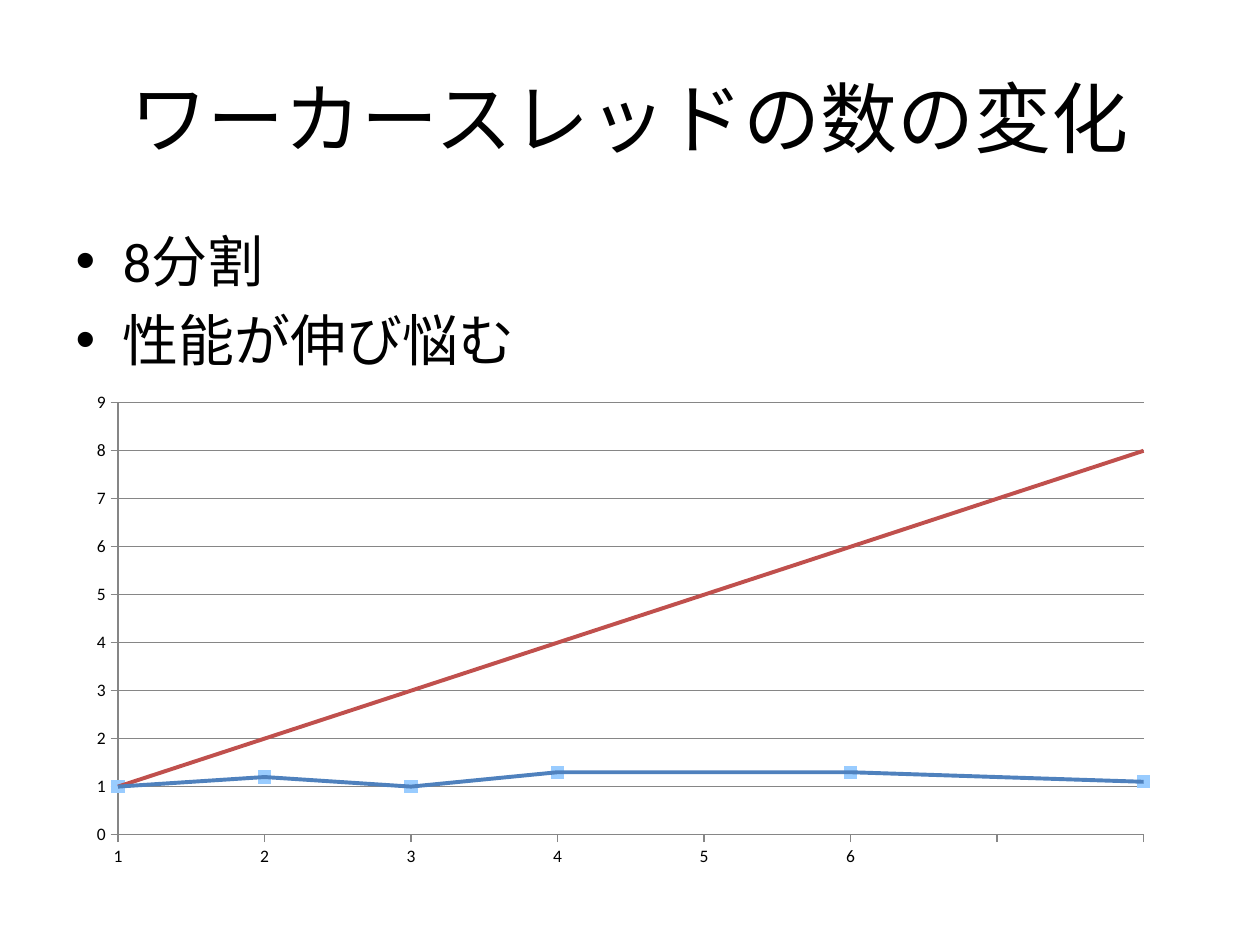
from dataclasses import dataclass
from typing import Optional

import pptx
import pptx.chart.data
import pptx.dml.color
import pptx.enum.chart
import pptx.enum.text
import pptx.oxml
import pptx.oxml.ns
import pptx.util
from pptx.util import Inches

FONT = "Calibri"
COLORS = {"text": "000000", "measured": "4F81BD", "ideal": "C0504D",
          "marker": "99CCFF", "axis": "868686"}


@dataclass
class Series:
    name: str
    values: list[Optional[float]]
    line: Optional[str] = None
    marker: Optional[str] = None


SERIES = [
    Series("Series 1", [1, 1.2, 1, 1.3, None, 1.3, None, 1.1], marker="marker"),
    Series("Series 2", list(range(1, 9)), line="ideal"),
    Series("Series 3", [1, 1.2, 1, 1.3, 1.3, 1.3, 1.2, 1.1], line="measured"),
]
# Only the first six thread counts are labelled.
CATEGORIES = [str(n) for n in range(1, 7)] + ["", ""]


def rgb(name: str) -> pptx.dml.color.RGBColor:
    return pptx.dml.color.RGBColor.from_string(COLORS[name])


def set_font(font, size: float) -> None:
    font.name = FONT
    font.size = pptx.util.Pt(size)
    font.color.rgb = rgb("text")


def fill_placeholder(sp, box: tuple, lines: list[str], size: float) -> None:
    sp.left, sp.top, sp.width, sp.height = map(Inches, box)
    tf = sp.text_frame
    tf.text = "\n".join(lines)
    for p in tf.paragraphs:
        set_font(p.font, size)


def style_series(plot_series, series: Series) -> None:
    plot_series.smooth = False
    line = plot_series.format.line
    if series.line:
        line.color.rgb = rgb(series.line)
        line.width = pptx.util.Pt(2.25)
    else:
        line.fill.background()
    marker = plot_series.marker
    if series.marker:
        marker.style = pptx.enum.chart.XL_MARKER_STYLE.SQUARE
        marker.size = 7
        marker.format.fill.solid()
        marker.format.fill.fore_color.rgb = rgb(series.marker)
        marker.format.line.fill.background()
    else:
        marker.style = pptx.enum.chart.XL_MARKER_STYLE.NONE


def style_axis(axis) -> None:
    axis.major_tick_mark = pptx.enum.chart.XL_TICK_MARK.OUTSIDE
    axis.minor_tick_mark = pptx.enum.chart.XL_TICK_MARK.NONE
    axis.format.line.color.rgb = rgb("axis")
    set_font(axis.tick_labels.font, 10)


def set_plot_area(chart, x: float, y: float, w: float, h: float) -> None:
    """Place the inner plot area, in fractions of the chart."""
    area = chart._chartSpace.chart.plotArea
    for old in area.findall(pptx.oxml.ns.qn("c:layout")):
        area.remove(old)
    modes = '<c:layoutTarget val="inner"/><c:xMode val="edge"/><c:yMode val="edge"/>'
    sizes = f'<c:x val="{x}"/><c:y val="{y}"/><c:w val="{w}"/><c:h val="{h}"/>'
    area.insert(0, pptx.oxml.parse_xml(
        f'<c:layout {pptx.oxml.ns.nsdecls("c")}><c:manualLayout>'
        f'{modes}{sizes}</c:manualLayout></c:layout>'))


def add_speed_chart(s) -> None:
    data = pptx.chart.data.CategoryChartData()
    data.categories = CATEGORIES
    for series in SERIES:
        data.add_series(series.name, series.values)
    chart = s.shapes.add_chart(
        pptx.enum.chart.XL_CHART_TYPE.LINE_MARKERS,
        Inches(0.59), Inches(3.04), Inches(8.66), Inches(3.94), data).chart
    chart.has_legend = False
    chart.has_title = False
    set_font(chart.font, 10)
    for plot_series, series in zip(chart.plots[0].series, SERIES):
        style_series(plot_series, series)

    value_axis = chart.value_axis
    for axis in (chart.category_axis, value_axis):
        style_axis(axis)
    value_axis.minimum_scale, value_axis.maximum_scale = 0, 9
    value_axis.major_unit = 1
    value_axis.has_major_gridlines = True
    value_axis.major_gridlines.format.line.color.rgb = rgb("axis")
    # Start the lines on the value axis itself.
    qn = pptx.oxml.ns.qn
    cross = value_axis._element.find(qn("c:crossBetween"))
    if cross is None:
        cross = pptx.oxml.parse_xml(
            f'<c:crossBetween {pptx.oxml.ns.nsdecls("c")} val="midCat"/>')
        value_axis._element.find(qn("c:crosses")).addnext(cross)
    cross.set("val", "midCat")
    set_plot_area(chart, 0.04, 0.04, 0.94, 0.87)


def main() -> None:
    prs = pptx.Presentation()
    prs.slide_width, prs.slide_height = Inches(10), Inches(7.5)
    s = prs.slides.add_slide(prs.slide_layouts[1])
    title, body = s.placeholders
    fill_placeholder(title, (0.5, 0.3, 9, 1.25), ["ワーカースレッドの数の変化"], 44)
    title.text_frame.paragraphs[0].alignment = pptx.enum.text.PP_ALIGN.CENTER
    fill_placeholder(body, (0.5, 1.75, 9, 4.95), ["8分割", "性能が伸び悩む"], 32)
    add_speed_chart(s)
    prs.save("out.pptx")


if __name__ == "__main__":
    main()
